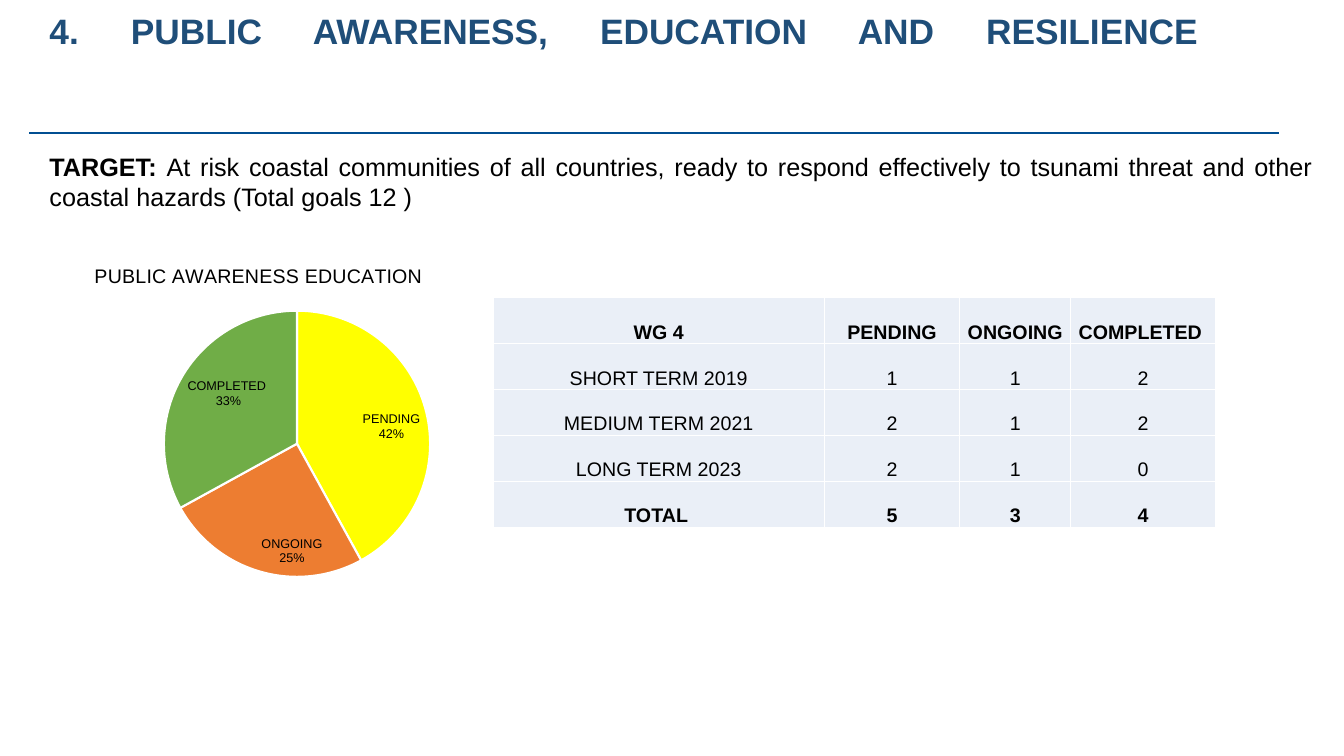
from lxml import etree
from pptx import Presentation
from pptx.chart.data import CategoryChartData
from pptx.dml.color import RGBColor
from pptx.enum.chart import XL_CHART_TYPE as ChartType, XL_LABEL_POSITION as LabelPos
from pptx.enum.shapes import MSO_CONNECTOR as Connector
from pptx.enum.text import MSO_ANCHOR as Anchor, MSO_AUTO_SIZE as AutoSize, PP_ALIGN as Align
from pptx.oxml import parse_xml
from pptx.oxml.ns import nsdecls, qn
from pptx.util import Inches, Pt

W, H = Inches(13.33), Inches(7.5)
FONT = "Arial"
BLACK = RGBColor(0x00, 0x00, 0x00)
WHITE = RGBColor(0xFF, 0xFF, 0xFF)
NAVY = RGBColor(0x1F, 0x4E, 0x79)
RULE_BLUE = RGBColor(0x01, 0x4F, 0x92)
CELL_BLUE = RGBColor(0xEA, 0xEF, 0xF7)
YELLOW = RGBColor(0xFF, 0xFF, 0x00)
ORANGE = RGBColor(0xED, 0x7D, 0x31)
GREEN = RGBColor(0x70, 0xAD, 0x47)

TITLE = "4. PUBLIC AWARENESS, EDUCATION AND RESILIENCE"
TARGET = ("At risk coastal communities of all countries, ready to respond effectively "
          "to tsunami threat and other coastal hazards (Total goals 12 ) ")
CHART_TITLE = "PUBLIC AWARENESS EDUCATION"
SLICES = [("PENDING", 42, YELLOW), ("ONGOING", 25, ORANGE), ("COMPLETED ", 33, GREEN)]
GOALS = [
    ("WG 4", "PENDING", "ONGOING", "COMPLETED "),
    ("SHORT TERM 2019", "1", "1", "2"),
    ("MEDIUM TERM 2021", "2", "1", "2"),
    ("LONG TERM 2023", "2", "1", "0"),
    ("TOTAL ", "5", "3", "4"),
]
COLUMN_SHARES = (45.9, 18.7, 15.4, 20)
PIE_LAYOUT = {"x": 0.34, "y": 0.17, "w": 0.45, "h": 0.71}


def across(percent):
    return int(W * percent / 100)


def down(percent):
    return int(H * percent / 100)


def box(left, top, width, height):
    return across(left), down(top), across(width), down(height)


def format_font(font, size, color=BLACK, bold=False):
    font.name, font.size, font.bold = FONT, Pt(size), bold
    font.color.rgb = color


def add_text(p, text, size=18, color=BLACK, bold=False, align=Align.JUSTIFY):
    p.alignment = align
    r = p.add_run()
    r.text = text
    format_font(r.font, size, color, bold)


def place_text(sp, area, anchor):
    sp.left, sp.top, sp.width, sp.height = area
    tf = sp.text_frame
    tf.word_wrap = True
    tf.auto_size = AutoSize.NONE
    tf.vertical_anchor = anchor
    p = tf.paragraphs[0]
    p.space_before = Pt(0)
    return p


def add_title(slide):
    p = place_text(slide.shapes.title, box(2.93, 4.4, 87, 9.6), Anchor.MIDDLE)
    p.line_spacing = 0.9
    add_text(p, TITLE, size=25.2, color=NAVY, bold=True)
    p.add_line_break()


def add_target(slide):
    p = place_text(slide.placeholders[1], box(2.93, 19.33, 95.5, 9.47), Anchor.TOP)
    p.space_after = Pt(6)
    pPr = p._p.get_or_add_pPr()
    pPr.set("marL", "0")
    pPr.set("indent", "0")
    etree.SubElement(pPr, qn("a:buNone"))
    add_text(p, "TARGET: ", bold=True)
    add_text(p, TARGET)


def add_rule(slide):
    y = down(17.6)
    line = slide.shapes.add_connector(Connector.STRAIGHT, across(2.18), y, across(95.2), y)
    line.line.color.rgb = RULE_BLUE
    line.line.width = Pt(1.75)
    etree.SubElement(line._element.spPr, qn("a:effectLst"))


def set_plot_layout(chart):
    plot_area = chart._chartSpace.chart.plotArea
    for old in plot_area.findall(qn("c:layout")):
        plot_area.remove(old)
    sizes = "".join(f'<c:{key} val="{share}"/>' for key, share in PIE_LAYOUT.items())
    plot_area.insert(0, parse_xml(
        f'<c:layout {nsdecls("c")}><c:manualLayout><c:layoutTarget val="inner"/>'
        f'<c:xMode val="edge"/><c:yMode val="edge"/>{sizes}</c:manualLayout></c:layout>'))


def add_pie(slide):
    data = CategoryChartData()
    data.categories = [name for name, _, _ in SLICES]
    data.add_series(CHART_TITLE, [value for _, value, _ in SLICES])
    area = box(-2.78, 32.67, 44.04, 49.6)
    chart = slide.shapes.add_chart(ChartType.PIE, *area, data).chart
    format_font(chart.font, 10)
    chart.has_legend = False
    chart.has_title = True
    add_text(chart.chart_title.text_frame.paragraphs[0], CHART_TITLE, size=14, align=Align.CENTER)
    chart.chart_title.include_in_layout = False
    set_plot_layout(chart)
    plot = chart.plots[0]
    plot.vary_by_categories = True
    for i, (_, _, color) in enumerate(SLICES):
        fmt = plot.series[0].points[i].format
        fmt.fill.solid()
        fmt.fill.fore_color.rgb = color
        fmt.line.color.rgb = WHITE
        fmt.line.width = Pt(1.5)
    labels = plot.series[0].data_labels
    labels.show_value = False
    labels.show_category_name = True
    labels.show_percentage = True
    labels.number_format = "0%"
    labels.number_format_is_linked = False
    labels.position = LabelPos.INSIDE_END
    format_font(labels.font, 9)


def add_borders(cell):
    tcPr = cell._tc.get_or_add_tcPr()
    for i, side in enumerate(("lnL", "lnR", "lnT", "lnB")):
        tcPr.insert(i, parse_xml(
            f'<a:{side} {nsdecls("a")} w="{Pt(1)}"><a:solidFill>'
            f'<a:srgbClr val="{WHITE}"/></a:solidFill></a:{side}>'))


def fill_cell(cell, text, bold):
    cell.fill.solid()
    cell.fill.fore_color.rgb = CELL_BLUE
    cell.vertical_anchor = Anchor.BOTTOM
    cell.margin_left = cell.margin_right = cell.margin_top = Inches(0.01)
    cell.margin_bottom = 0
    add_text(cell.text_frame.paragraphs[0], text, size=14, bold=bold, align=Align.CENTER)
    add_borders(cell)


def add_goals(slide):
    area = box(36.68, 39.33, 53.75, 30.4)
    table = slide.shapes.add_table(len(GOALS), len(COLUMN_SHARES), *area).table
    for column, share in zip(table.columns, COLUMN_SHARES):
        column.width = int(area[2] * share / 100)
    for i, row in enumerate(GOALS):
        for j, text in enumerate(row):
            fill_cell(table.cell(i, j), text, bold=i in (0, len(GOALS) - 1))


def main():
    prs = Presentation()
    prs.slide_width, prs.slide_height = W, H
    slide = prs.slides.add_slide(prs.slide_layouts[1])
    add_title(slide)
    add_target(slide)
    add_pie(slide)
    add_goals(slide)
    add_rule(slide)
    prs.save("out.pptx")


if __name__ == "__main__":
    main()
